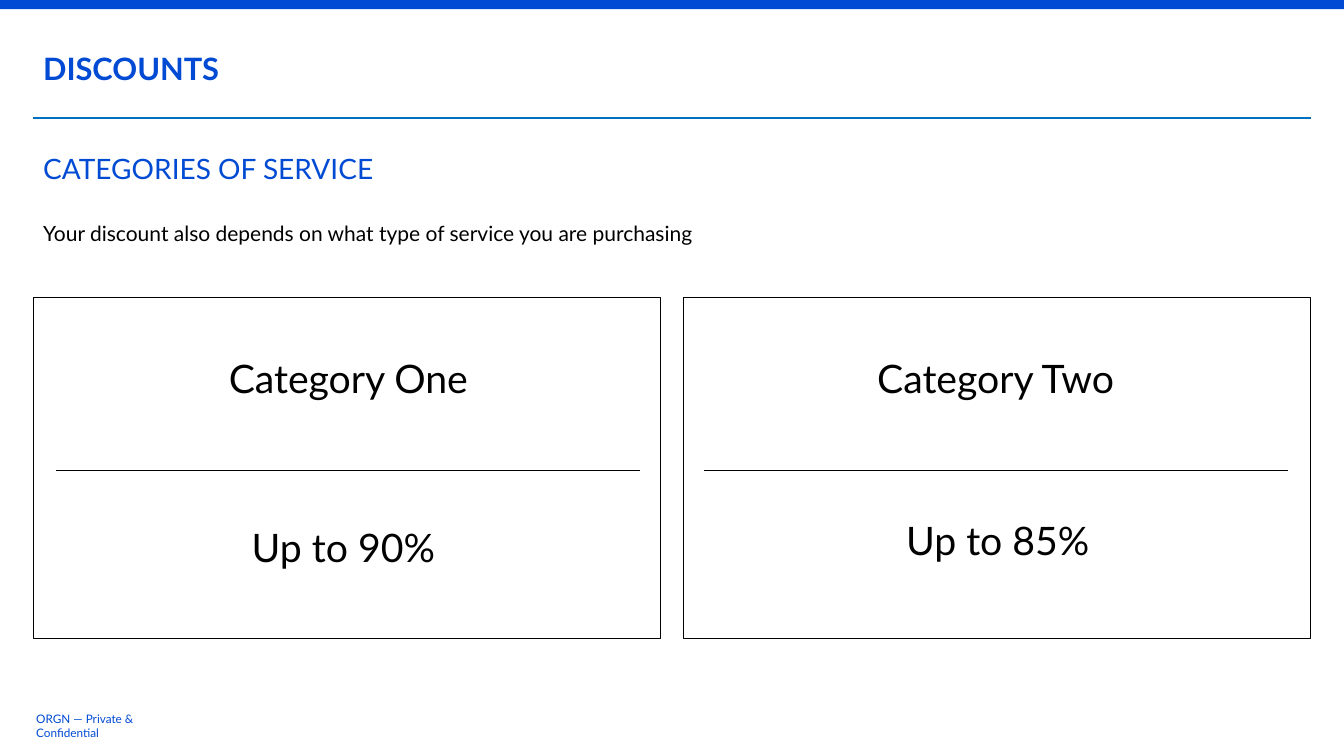
from dataclasses import dataclass

from lxml.etree import SubElement
from pptx import Presentation
from pptx.dml.color import RGBColor
from pptx.enum.shapes import MSO_CONNECTOR, MSO_SHAPE
from pptx.enum.text import MSO_ANCHOR, PP_ALIGN
from pptx.oxml.ns import qn
from pptx.util import Inches, Pt

# Content: each card has a name, its discount and small offsets in inches
SECTION = "DISCOUNTS"
TITLE = "CATEGORIES OF SERVICE"
INTRO = "Your discount also depends on what type of service you are purchasing"
FOOTER = "ORGN — Private & Confidential"
CARDS = [
    dict(name="Category One", discount="Up to 90%", inset=0.23, shift=-0.05, top=5.14),
    dict(name="Category Two", discount="Up to 85%", inset=0.2, shift=0.02, top=5.07),
]


@dataclass(frozen=True)
class Theme:
    font: str = "Lato"
    brand: str = "004AD4"
    rule: str = "0070C0"
    ink: str = "000000"
    paper: str = "FFFFFF"
    section: float = 22
    title: float = 20
    body: float = 15
    card: float = 28
    footer: float = 8.4


T = Theme()

# Grid
W, H = 13.33, 7.5
MARGIN, GAP = 0.33, 0.23
CONTENT_W = W - 2 * MARGIN
CARD_W = (CONTENT_W - GAP) / len(CARDS)
CARD_TOP, CARD_H = 2.95, 3.38
LABEL_TOP, LABEL_W, LABEL_H = 3.47, 5.79, 0.57
DIVIDER_Y = 4.67

prs = Presentation()
prs.slide_width, prs.slide_height = Inches(W), Inches(H)
s = prs.slides.add_slide(prs.slide_layouts[6])


def add_text(text, x, y, w, h, size, color=T.ink, bold=False, align=PP_ALIGN.LEFT,
             anchor=MSO_ANCHOR.TOP, inset=None, after=0):
    tf = s.shapes.add_textbox(Inches(x), Inches(y), Inches(w), Inches(h)).text_frame
    tf.word_wrap = True
    tf.vertical_anchor = anchor
    if inset is not None:
        tf.margin_left = tf.margin_right = tf.margin_top = tf.margin_bottom = Inches(inset)
    p = tf.paragraphs[0]
    p.alignment, p.space_after = align, Pt(after)
    r = p.add_run()
    r.text = text
    r.font.name, r.font.size, r.font.bold = T.font, Pt(size), bold
    r.font.color.rgb = RGBColor.from_string(color)


def add_rect(x, y, w, h, fill, line=None):
    sp = s.shapes.add_shape(MSO_SHAPE.RECTANGLE, Inches(x), Inches(y), Inches(w), Inches(h))
    sp.shadow.inherit = False
    sp.fill.solid()
    sp.fill.fore_color.rgb = RGBColor.from_string(fill)
    if line:
        sp.line.color.rgb = RGBColor.from_string(line)
        sp.line.width = Pt(0.75)
    else:
        sp.line.fill.background()


def add_rule(x, y, w, color, weight):
    c = s.shapes.add_connector(MSO_CONNECTOR.STRAIGHT, Inches(x), Inches(y),
                               Inches(x + w), Inches(y))
    c.line.color.rgb = RGBColor.from_string(color)
    c.line.width = Pt(weight)
    SubElement(c._element.spPr, qn("a:effectLst"))


# Frame: top band, header rule, footer
add_rule(MARGIN, 1.17, CONTENT_W, T.rule, 1.25)
add_rect(0, 0, W, 0.09, T.brand)
add_text(FOOTER, MARGIN, 7.1, 1.5, 0.2, T.footer, T.brand,
         anchor=MSO_ANCHOR.MIDDLE, inset=0.03)

# Headings
add_text(SECTION, MARGIN, 0.33, CONTENT_W, 0.69, T.section, T.brand, bold=True,
         anchor=MSO_ANCHOR.MIDDLE)
add_text(TITLE, MARGIN, 1.33, CONTENT_W, 0.67, T.title, T.brand, anchor=MSO_ANCHOR.MIDDLE)
add_text(INTRO, MARGIN, 2.14, CONTENT_W, 0.68, T.body)

# Category cards
for i, card in enumerate(CARDS):
    left = MARGIN + i * (CARD_W + GAP)
    inner = left + card["inset"]
    add_rect(left, CARD_TOP, CARD_W, CARD_H, T.paper, T.ink)
    add_text(card["name"], inner, LABEL_TOP, LABEL_W, LABEL_H, T.card,
             align=PP_ALIGN.CENTER, after=4)
    add_text(card["discount"], inner + card["shift"], card["top"], LABEL_W, LABEL_H, T.card,
             align=PP_ALIGN.CENTER, after=8)
    add_rule(inner, DIVIDER_Y, LABEL_W, T.ink, 0.75)

prs.save("out.pptx")
